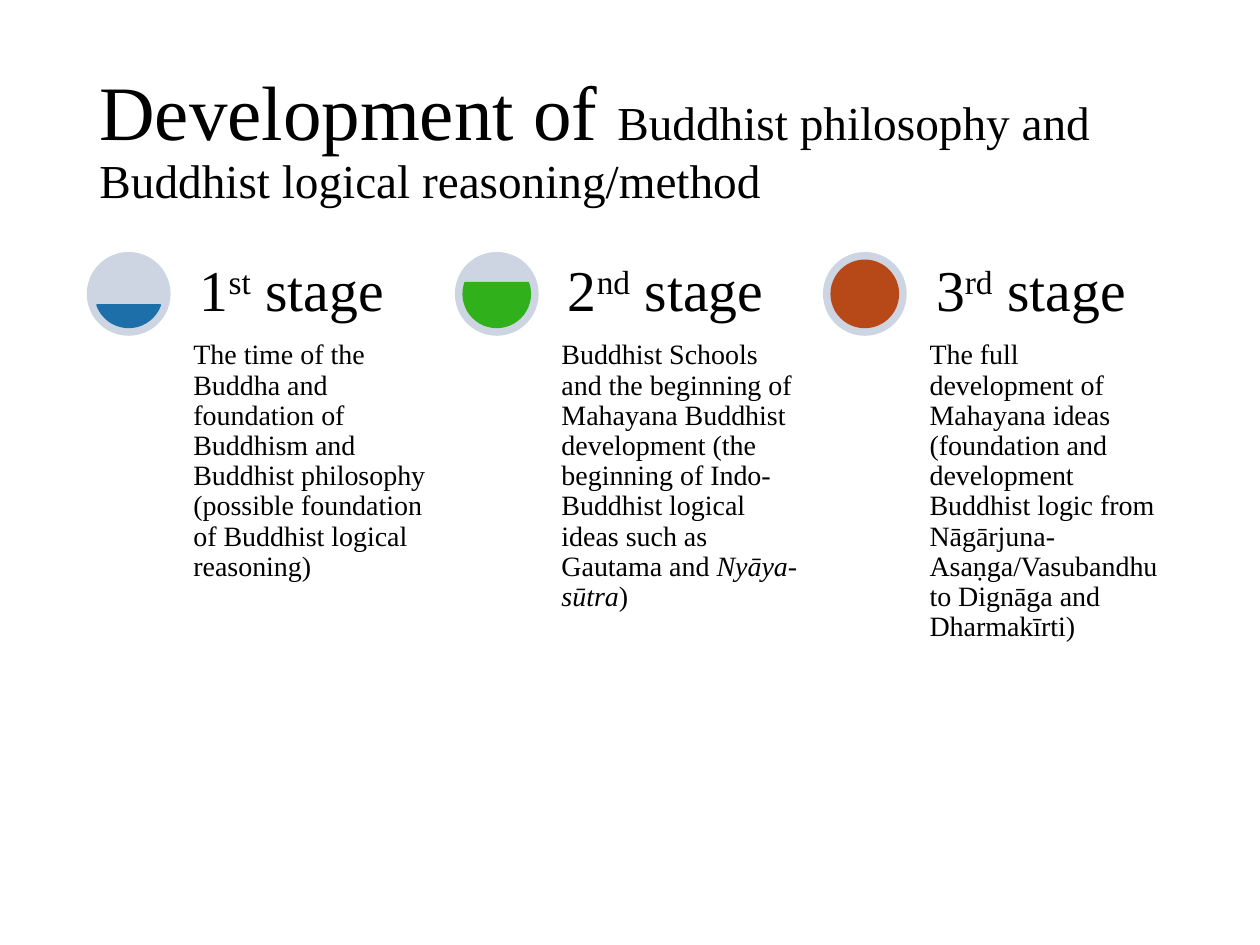
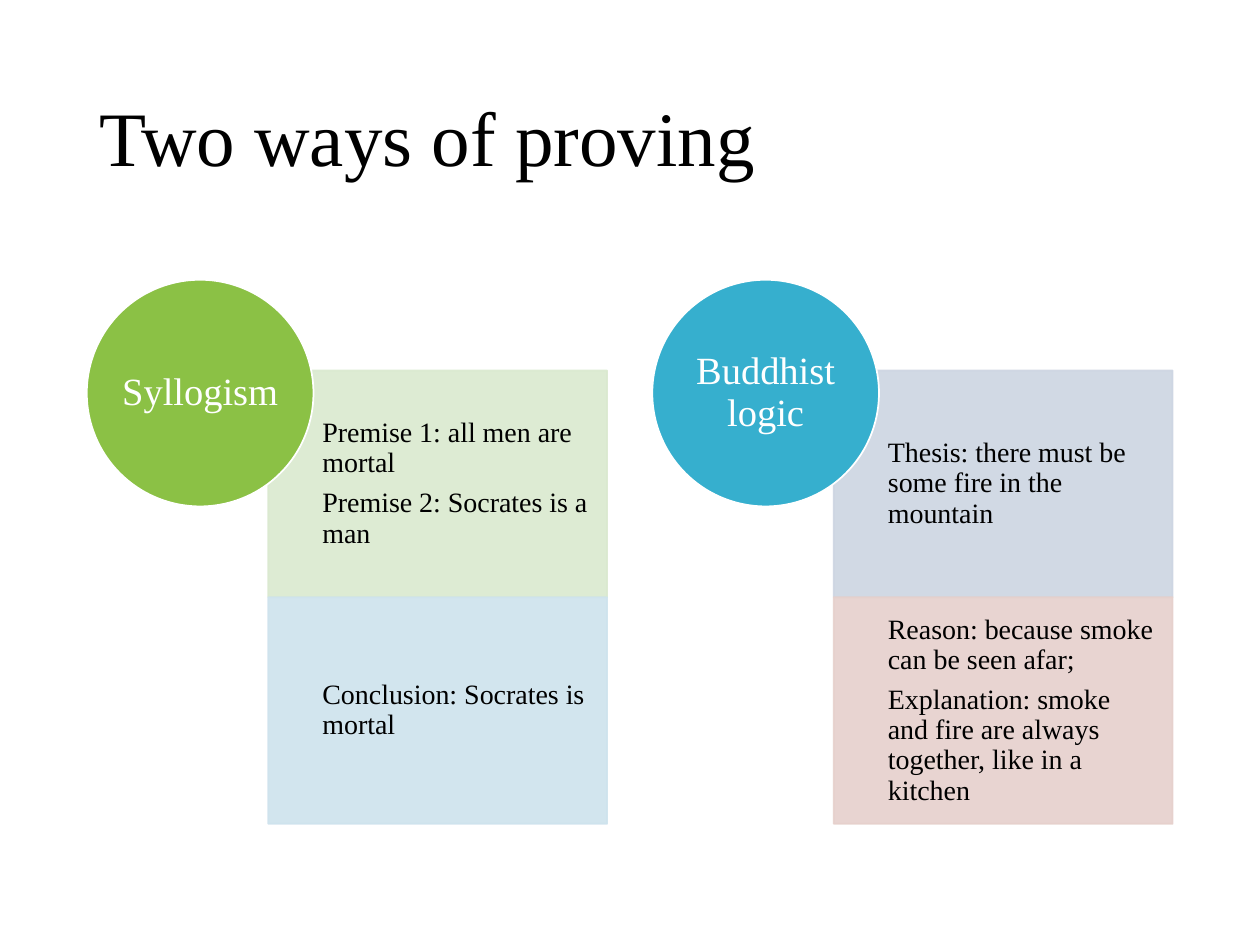
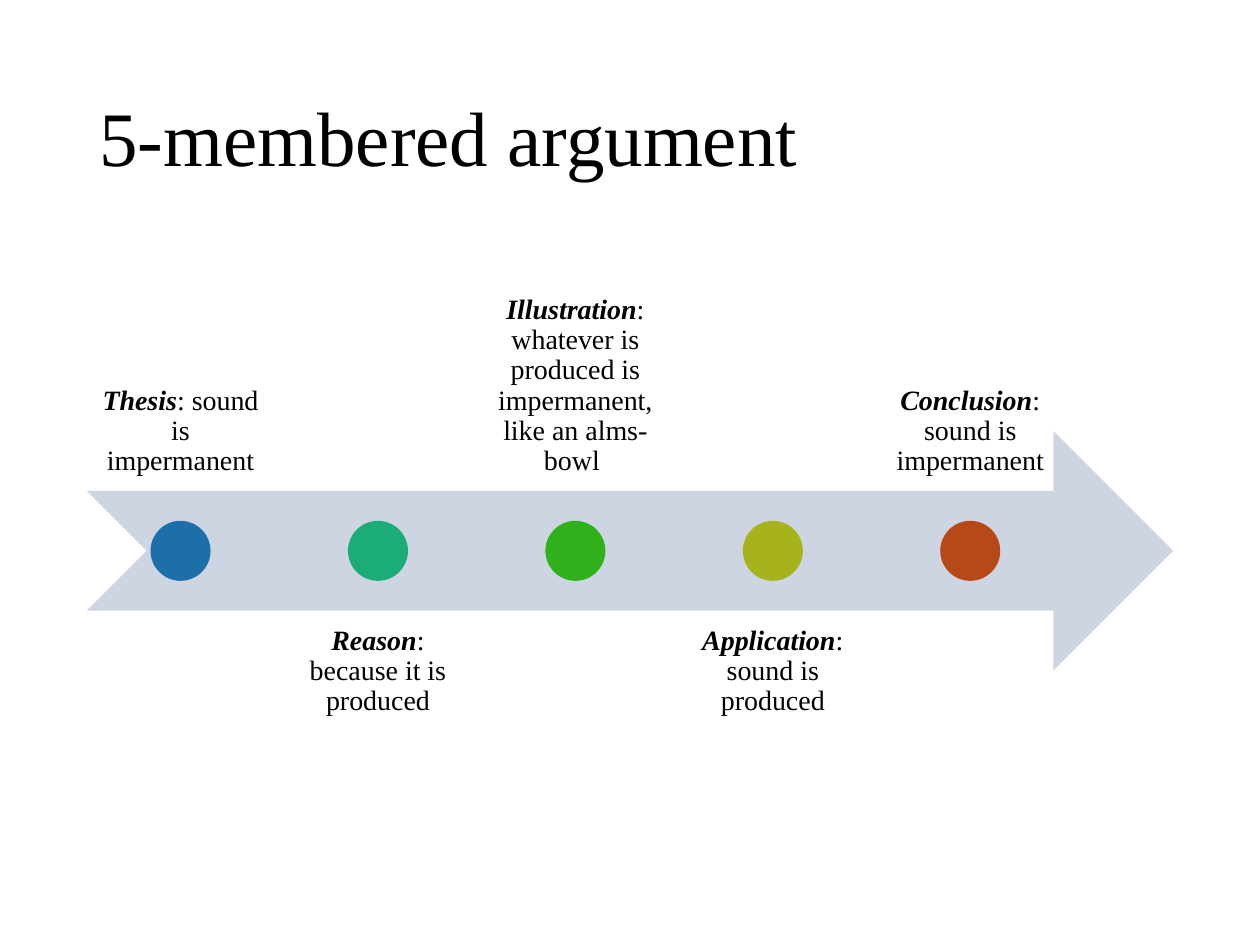
from math import asin, degrees

from lxml.etree import SubElement
from pptx import Presentation
from pptx.dml.color import RGBColor
from pptx.enum.shapes import MSO_SHAPE
from pptx.enum.text import MSO_ANCHOR, PP_ALIGN
from pptx.oxml.ns import qn
from pptx.util import Cm, Pt

# Content: text is a list of paragraphs, each a list of (text, format) runs
PLAIN = {}
ITALIC = {"italic": True}
STRONG = {"bold": True, "italic": True}
SUPERSCRIPT = {"baseline": 30000}

STAGES_TITLE = [("Development of ", PLAIN),
                ("Buddhist philosophy and Buddhist logical reasoning/method", {"size": Pt(27)})]
# number, ordinal ending, fill level, colour, detail
STAGES = [
    ("1", "st", 1 / 3, "1D6FA9",
     [("The time of the Buddha and foundation of Buddhism and Buddhist philosophy "
       "(possible foundation of Buddhist logical reasoning)", PLAIN)]),
    ("2", "nd", 2 / 3, "30B01B",
     [("Buddhist Schools and the beginning of Mahayana Buddhist development "
       "(the beginning of Indo-Buddhist logical ideas such as Gautama and ", PLAIN),
      ("Nyāya-sūtra", ITALIC), (")", PLAIN)]),
    ("3", "rd", 1, "B74919",
     [("The full development of Mahayana ideas (foundation and development Buddhist "
       "logic from Nāgārjuna- Asaṇga/Vasubandhu to Dignāga and Dharmakīrti)", PLAIN)]),
]

PROOFS_TITLE = [("Two ways of proving", PLAIN)]
# name, colour, panels of (colour, lines)
PROOFS = [
    ("Syllogism", "8BC145", [
        ("DAE9CF", ["Premise 1: all men are mortal", "Premise 2: Socrates is a man"]),
        ("CEE3ED", ["Conclusion: Socrates is mortal"])]),
    ("Buddhist logic", "36AFCE", [
        ("CDD5E2", ["Thesis: there must be some fire in the mountain"]),
        ("E6D0CC", ["Reason: because smoke can be seen afar;",
                    "Explanation: smoke and fire are always together, like in a kitchen"])]),
]

ARGUMENT_TITLE = [("5-membered argument", PLAIN)]
MEMBERS = [
    ("Thesis", ": sound is impermanent", "1D6FA9"),
    ("Reason", ": because it is produced", "1CAC78"),
    ("Illustration", ": whatever is produced is impermanent, like an alms-bowl ", "30B01B"),
    ("Application", ": sound is produced", "A7B31A"),
    ("Conclusion", ": sound is impermanent", "B74919"),
]

# Shared style, lengths in centimetres
FONT = "Times New Roman"
BLACK, WHITE, PALE = "000000", "FFFFFF", "CDD5E2"
LEFT, BODY_TOP, BODY_WIDTH = 1.75, 5.08, 21.9
TITLE_BOX = (LEFT, 1.01, BODY_WIDTH, 3.68)


def colour(value):
    return RGBColor.from_string(value)


def lengths(box):
    return [Cm(value) for value in box]


def write(frame, paragraphs, size, ink=BLACK, anchor=MSO_ANCHOR.TOP, align=PP_ALIGN.LEFT):
    frame.word_wrap = True
    frame.vertical_anchor = anchor
    for index, runs in enumerate(paragraphs):
        paragraph = frame.add_paragraph() if index else frame.paragraphs[0]
        paragraph.alignment = align
        paragraph.line_spacing = 0.9
        if index < len(paragraphs) - 1:
            paragraph.space_after = Pt(size * 0.35)
        for text, formats in runs:
            run = paragraph.add_run()
            run.text = text
            run.font.color.rgb = colour(ink)
            for key, value in {"name": FONT, "size": Pt(size), **formats}.items():
                if key == "baseline":
                    run._r.get_or_add_rPr().set(key, str(value))
                else:
                    setattr(run.font, key, value)


def add_text(slide, box, paragraphs, size, insets, **style):
    frame = slide.shapes.add_textbox(*lengths(box)).text_frame
    for side, inset in zip(("left", "top", "right", "bottom"), insets):
        setattr(frame, f"margin_{side}", Cm(inset))
    write(frame, paragraphs, size, **style)


def add_figure(slide, kind, box, fill, line=None, alpha=None):
    figure = slide.shapes.add_shape(kind, *lengths(box))
    figure.shadow.inherit = False
    figure.fill.solid()
    figure.fill.fore_color.rgb = colour(fill)
    if line:
        figure.line.color.rgb = colour(line)
        figure.line.width = Pt(1)
    else:
        figure.line.fill.background()
    if alpha:
        for tint in figure._element.spPr.iter(qn("a:srgbClr")):
            SubElement(tint, qn("a:alpha")).set("val", str(alpha * 1000))
    return figure


def add_titled_slide(deck, title):
    slide = deck.slides.add_slide(deck.slide_layouts[5])
    heading = slide.shapes.title
    heading.left, heading.top, heading.width, heading.height = lengths(TITLE_BOX)
    write(heading.text_frame, [title], 44, anchor=MSO_ANCHOR.MIDDLE)
    return slide


def build_stages(deck):
    slide = add_titled_slide(deck, STAGES_TITLE)
    pitch, dial, rim = 7.42, 1.69, 0.17
    text_offset, text_width, detail_height = 2.05, 5, 7.14
    for index, (number, ending, level, hue, detail) in enumerate(STAGES):
        left = LEFT + index * pitch
        text_left = left + text_offset
        add_figure(slide, MSO_SHAPE.OVAL, (left, BODY_TOP, dial, dial), PALE)

        # Chord angles follow the fill level; one degree is 0.6 adjustment units
        core = dial - 2 * rim
        gauge = add_figure(slide, MSO_SHAPE.CHORD,
                           (left + rim, BODY_TOP + rim, core, core), hue, line=hue)
        surface = degrees(asin(1 - 2 * level))
        for side, angle in enumerate((surface, 180 - surface)):
            gauge.adjustments[side] = angle % 360 * 0.6

        add_text(slide, (text_left, BODY_TOP + dial, text_width, detail_height),
                 [detail], 16, [0.1] * 4)
        stage = [(number, PLAIN), (ending, SUPERSCRIPT), (" stage", PLAIN)]
        add_text(slide, (text_left, BODY_TOP, text_width, dial),
                 [stage], 33, [0.23] * 4, anchor=MSO_ANCHOR.BOTTOM)


def build_proofs(deck):
    slide = add_titled_slide(deck, PROOFS_TITLE)
    pitch, disc, disc_top, disc_inset = 11.4, 4.57, 5.64, 0.67
    panel_offset, panel_top, panel_width, panel_height = 3.66, 7.47, 6.83, 4.57
    indent = 1.09
    for index, (name, hue, panels) in enumerate(PROOFS):
        left = LEFT + index * pitch
        panel_left = left + panel_offset
        for row, (tint, lines) in enumerate(panels):
            top = panel_top + row * panel_height
            add_figure(slide, MSO_SHAPE.RECTANGLE,
                       (panel_left, top, panel_width, panel_height), tint, line=tint, alpha=90)
            add_text(slide, (panel_left + indent, top, panel_width - indent, panel_height),
                     [[(line, PLAIN)] for line in lines], 16, (0, 0.3, 0.3, 0.3),
                     anchor=MSO_ANCHOR.MIDDLE)
        add_figure(slide, MSO_SHAPE.OVAL, (left, disc_top, disc, disc), hue, line=WHITE)
        label = disc - 2 * disc_inset
        add_text(slide, (left + disc_inset, disc_top + disc_inset, label, label),
                 [[(name, PLAIN)]], 22, [0] * 4, ink=WHITE,
                 anchor=MSO_ANCHOR.MIDDLE, align=PP_ALIGN.CENTER)


def build_argument(deck):
    slide = add_titled_slide(deck, ARGUMENT_TITLE)
    arrow_top, height, width, pitch, dot = 8.69, 4.83, 3.78, 3.98, 1.21
    add_figure(slide, MSO_SHAPE.NOTCHED_RIGHT_ARROW,
               (LEFT, arrow_top, BODY_WIDTH, height), PALE)
    for index, (name, claim, hue) in enumerate(MEMBERS):
        left = LEFT + index * pitch
        # Labels alternate above and below the arrow's shaft
        below = index % 2
        add_text(slide, (left, BODY_TOP + below * 1.5 * height, width, height),
                 [[(name, STRONG), (claim, PLAIN)]], 16, [0.3] * 4,
                 anchor=MSO_ANCHOR.TOP if below else MSO_ANCHOR.BOTTOM, align=PP_ALIGN.CENTER)
        add_figure(slide, MSO_SHAPE.OVAL,
                   (left + (width - dot) / 2, arrow_top + (height - dot) / 2, dot, dot), hue)


def main():
    deck = Presentation()
    deck.slide_width, deck.slide_height = Cm(25.4), Cm(19.05)
    for build in (build_stages, build_proofs, build_argument):
        build(deck)
    deck.save("out.pptx")


if __name__ == "__main__":
    main()
